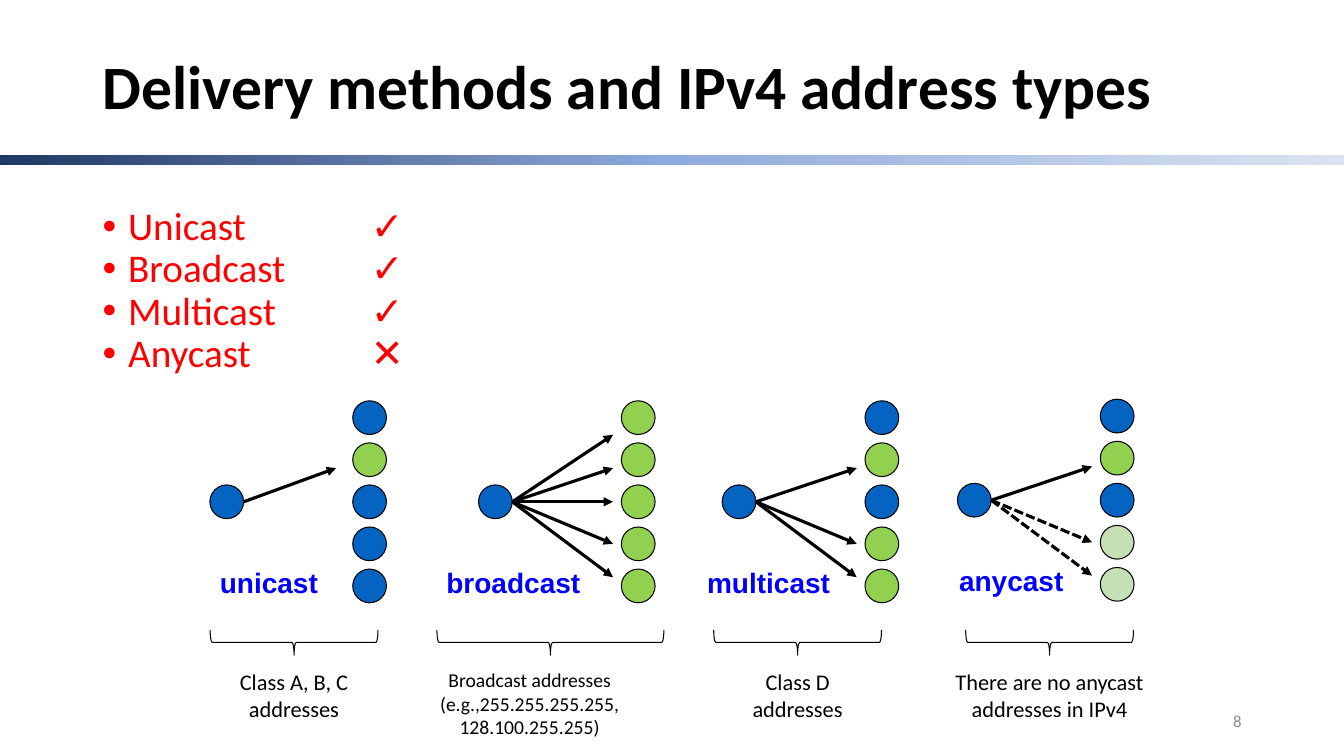
from copy import deepcopy

from lxml.etree import SubElement
from pptx import Presentation
from pptx.dml.color import RGBColor
from pptx.enum.dml import MSO_LINE
from pptx.enum.shapes import MSO_CONNECTOR, MSO_SHAPE
from pptx.enum.text import MSO_ANCHOR, PP_ALIGN
from pptx.oxml.ns import qn
from pptx.util import Cm, Pt

ELLIPSE, BRACE, RECTANGLE = MSO_SHAPE.OVAL, MSO_SHAPE.RIGHT_BRACE, MSO_SHAPE.RECTANGLE
STRAIGHT, DASHED = MSO_CONNECTOR.STRAIGHT, MSO_LINE.SQUARE_DOT
LEFT, CENTER, RIGHT = PP_ALIGN.LEFT, PP_ALIGN.CENTER, PP_ALIGN.RIGHT
TOP, MIDDLE = MSO_ANCHOR.TOP, MSO_ANCHOR.MIDDLE

BLACK = RGBColor(0x00, 0x00, 0x00)
RED = RGBColor(0xFF, 0x00, 0x00)
GRAY = RGBColor(0x8C, 0x8C, 0x8C)
LABEL_BLUE = RGBColor(0x00, 0x00, 0xFF)
NODE_BLUE = RGBColor(0x05, 0x63, 0xC1)
GREEN = RGBColor(0x92, 0xD0, 0x50)
PALE_GREEN = RGBColor(0xC5, 0xE0, 0xB4)
BAND_COLORS = (RGBColor(0x20, 0x38, 0x64), RGBColor(0x8F, 0xAA, 0xDC),
               RGBColor(0xDA, 0xE3, 0xF3))

deck = Presentation()
deck.slide_width, deck.slide_height = Cm(33.87), Cm(19.05)
page = deck.slides.add_slide(deck.slide_layouts[6])


def add_text(text, left, top, width, height, size, color, font="Calibri",
             bold=False, align=LEFT, anchor=TOP):
    box = page.shapes.add_textbox(Cm(left), Cm(top), Cm(width), Cm(height))
    frame = box.text_frame
    frame.word_wrap = True
    frame.vertical_anchor = anchor
    frame.text = text
    for para in frame.paragraphs:
        para.alignment = align
        for span in para.runs:
            span.font.name, span.font.size = font, Pt(size)
            span.font.bold, span.font.color.rgb = bold, color
    return frame


def add_outlined(kind, left, top, width, height):
    shape = page.shapes.add_shape(kind, Cm(left), Cm(top), Cm(width), Cm(height))
    shape.shadow.inherit = False
    shape.line.color.rgb = BLACK
    shape.line.width = Pt(0.75)
    return shape


# Gradient band under the title
band = page.shapes.add_shape(RECTANGLE, 0, Cm(3.91), deck.slide_width, Cm(0.24))
band.shadow.inherit = False
band.line.fill.background()
band.fill.gradient()
band.fill.gradient_angle = 0
stop_list = band._element.spPr.find(qn("a:gradFill")).find(qn("a:gsLst"))
stop_list.insert(1, deepcopy(stop_list[0]))
for index, (stop, color) in enumerate(zip(band.fill.gradient_stops, BAND_COLORS)):
    stop.position = index / 2
    stop.color.rgb = color

# Title, method list and slide number
title = add_text("Delivery methods and IPv4 address types", 2.34, 1.02, 29.21, 2.46,
                 44, BLACK, bold=True, anchor=MIDDLE)
title.paragraphs[0].line_spacing = 0.9

methods = add_text("Unicast\t✓\nBroadcast \t✓\nMulticast \t✓\nAnycast \t✕",
                   2.34, 4.55, 29.21, 12.62, 28, RED)
methods.margin_top = Cm(0.66)
for para in methods.paragraphs:
    para.line_spacing = 0.9
    properties = para._p.get_or_add_pPr()
    properties.set("marL", str(Cm(0.64)))
    properties.set("indent", str(-Cm(0.64)))
    SubElement(properties, qn("a:buFont"), typeface="Arial")
    SubElement(properties, qn("a:buChar"), char="•")
    tabs = SubElement(properties, qn("a:tabLst"))
    SubElement(tabs, qn("a:tab"), pos=str(Cm(6.76)), algn="l")

add_text("8", 23.92, 17.65, 7.62, 1.02, 12, GRAY, align=RIGHT, anchor=MIDDLE)

# Delivery diagrams: one sender facing a column of five receivers
NODE, PITCH, COLUMN_OFFSET, SENDER_ROW = 0.85, 1.06, 3.6, 2
TIP_RISES = (-1.69, -0.85, 0, 1.06, 1.9)
CAPTION_WIDTH, BRACE_DEPTH, BRACE_MIDDLE = 5.5, 0.64, 16.19
B, G, P = NODE_BLUE, GREEN, PALE_GREEN

# name, sender left, column top, receivers, arrow reach, label left,
# brace centre, brace length, caption centre, caption, caption size
DIAGRAMS = (
    ("unicast", 5.29, 10.1, (B, G, B, B, B), 3.18, 5.29,
     7.41, 4.23, 7.41, "Class A, B, C addresses", 16),
    ("broadcast", 12.06, 10.1, (G, G, G, G, G), 3.39, 11.0,
     13.87, 5.72, 13.35,
     "Broadcast addresses\v(e.g.,255.255.255.255, 128.100.255.255)", 14),
    ("multicast", 18.2, 10.1, (B, G, B, G, G), 3.39, 17.57,
     20.1, 4.23, 20.1, "Class D\vaddresses", 16),
    ("anycast", 24.13, 10.06, (B, G, B, P, P), 3.39, 23.92,
     26.45, 4.23, 26.45, "There are no anycast addresses in IPv4", 16),
)

for (name, left, top, receivers, reach, label_left, brace_center, brace_length,
     caption_center, caption, caption_size) in DIAGRAMS:
    sender_top = top + SENDER_ROW * PITCH
    nodes = [(left, sender_top, NODE_BLUE)]
    nodes += [(left + COLUMN_OFFSET, top + row * PITCH, color)
              for row, color in enumerate(receivers)]
    for node_left, node_top, color in nodes:
        node = add_outlined(ELLIPSE, node_left, node_top, NODE, NODE)
        node.fill.solid()
        node.fill.fore_color.rgb = color

    start_y = sender_top + NODE / 2
    for color, rise in zip(receivers, TIP_RISES):
        if color == NODE_BLUE:
            continue
        arrow = page.shapes.add_connector(STRAIGHT, Cm(left + NODE), Cm(start_y),
                                          Cm(left + reach), Cm(start_y + rise))
        arrow.line.color.rgb = BLACK
        arrow.line.width = Pt(2.25)
        if color == PALE_GREEN:
            arrow.line.dash_style = DASHED
        outline = arrow._element.spPr.find(qn("a:ln"))
        SubElement(outline, qn("a:tailEnd"), type="triangle")
        SubElement(arrow._element.spPr, qn("a:effectLst"))

    add_text(name, label_left, top + 4.02, 4.23, 1.09, 20, LABEL_BLUE,
             font="Arial", bold=True)

    brace = add_outlined(BRACE, brace_center - BRACE_DEPTH / 2,
                         BRACE_MIDDLE - brace_length / 2, BRACE_DEPTH, brace_length)
    brace.rotation = 90
    brace.adjustments[0] = 0.08
    brace.fill.background()

    add_text(caption, caption_center - CAPTION_WIDTH / 2, 16.71, CAPTION_WIDTH, 1.63,
             caption_size, BLACK, align=CENTER)

deck.save("out.pptx")
